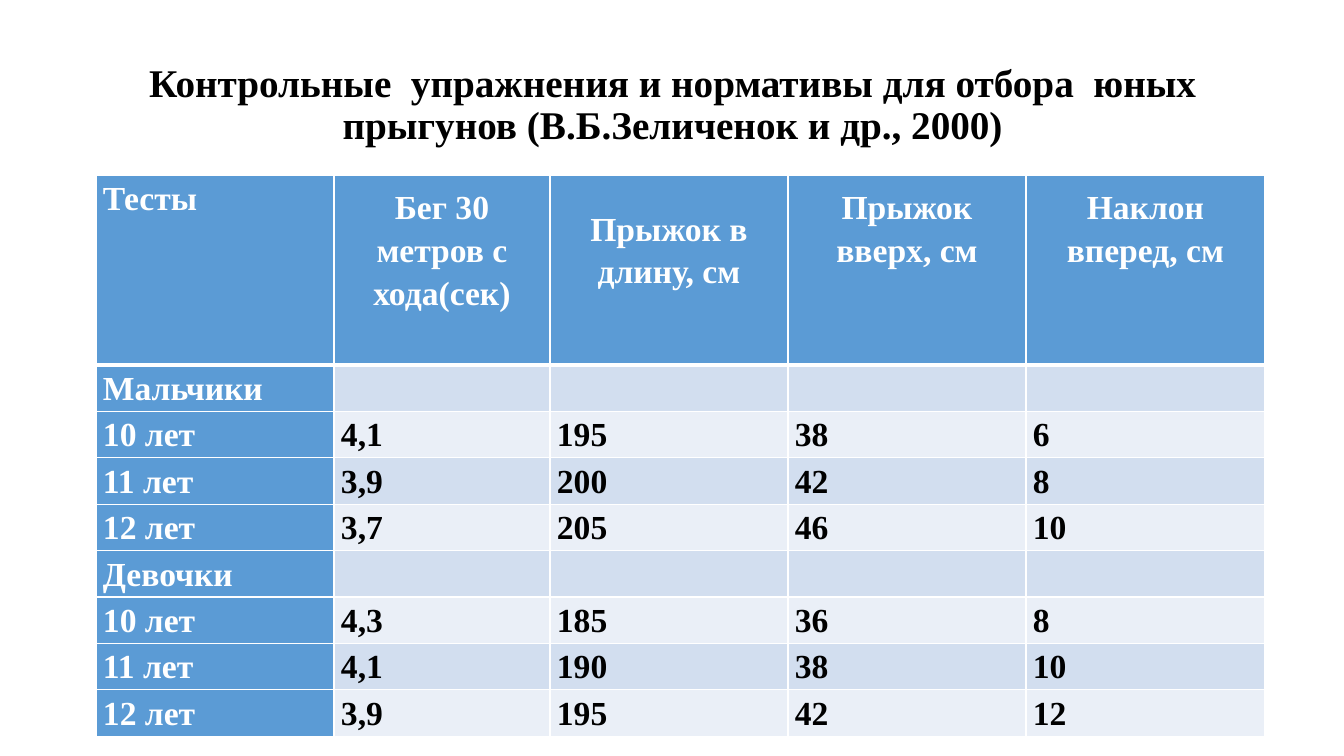
from lxml.etree import SubElement
from pptx import Presentation
from pptx.dml.color import RGBColor
from pptx.enum.text import MSO_ANCHOR, PP_ALIGN
from pptx.oxml.ns import qn
from pptx.util import Emu, Pt

FONT = "Times New Roman"
BLACK = RGBColor(0x00, 0x00, 0x00)
WHITE = RGBColor(0xFF, 0xFF, 0xFF)
BLUE = RGBColor(0x5B, 0x9B, 0xD5)
BAND_DARK = RGBColor(0xD2, 0xDE, 0xEF)
BAND_LIGHT = RGBColor(0xEA, 0xEF, 0xF7)

TITLE = "Контрольные  упражнения и нормативы для отбора  юных прыгунов (В.Б.Зеличенок и др., 2000)"
HEADERS = [
    ("Тесты", 0),
    ("Бег 30 метров с хода(сек)", 43),
    ("Прыжок в длину, см", 43),
    ("Прыжок вверх, см", 86),
    ("Наклон вперед, см", 86),
]
ROWS = [
    ["Мальчики", "", "", "", ""],
    ["10 лет", "4,1", "195", "38", "6"],
    ["11 лет", "3,9", "200", "42", "8"],
    ["12 лет", "3,7", "205", "46", "10"],
    ["Девочки", "", "", "", ""],
    ["10 лет", "4,3", "185", "36", "8"],
    ["11 лет", "4,1", "190", "38", "10"],
    ["12 лет", "3,9", "195", "42", "12"],
]
COL_WIDTHS = [238, 216, 238, 238, 239]
HEADER_HEIGHT = 190


def px(n):
    return Emu(round(n * 914400 / 100.8))


def add_text(tf, text, size, color, align, spacing):
    p = tf.paragraphs[0]
    p.alignment = align
    p.line_spacing = spacing
    r = p.add_run()
    r.text = text
    r.font.name = FONT
    r.font.size = Pt(size)
    r.font.bold = True
    r.font.color.rgb = color


def add_borders(cell, top, bottom):
    tc_pr = cell._tc.get_or_add_tcPr()
    for side, width in (("L", 1), ("R", 1), ("T", top), ("B", bottom)):
        ln = SubElement(tc_pr, qn(f"a:ln{side}"), w=str(Pt(width)))
        fill = SubElement(ln, qn("a:solidFill"))
        SubElement(fill, qn("a:srgbClr"), val=str(WHITE))


def style_cell(cell, fill, top=1, bottom=1):
    add_borders(cell, top, bottom)
    cell.fill.solid()
    cell.fill.fore_color.rgb = fill


def fill_cell(cell, text, color, align=PP_ALIGN.LEFT, margin_bottom=0):
    cell.margin_left = cell.margin_right = px(7)
    cell.margin_top = 0
    cell.margin_bottom = px(margin_bottom)
    add_text(cell.text_frame, text, 24, color, align, 1.15)


def add_title(s, x, y, w, h):
    tf = s.shapes.add_textbox(px(x), px(y), px(w), px(h)).text_frame
    tf.word_wrap = True
    tf.vertical_anchor = MSO_ANCHOR.MIDDLE
    add_text(tf, TITLE, 28, BLACK, PP_ALIGN.CENTER, 0.9)


def add_norms_table(s, x, y, w, h):
    table = s.shapes.add_table(
        len(ROWS) + 1, len(HEADERS), px(x), px(y), px(w), px(h)
    ).table
    for column, width in zip(table.columns, COL_WIDTHS):
        column.width = px(width)
    for row in table.rows:
        row.height = px((h - HEADER_HEIGHT) / len(ROWS))
    table.rows[0].height = px(HEADER_HEIGHT)

    for j, (text, margin_bottom) in enumerate(HEADERS):
        cell = table.cell(0, j)
        style_cell(cell, BLUE, bottom=3)
        cell.vertical_anchor = MSO_ANCHOR.MIDDLE if j else MSO_ANCHOR.TOP
        align = PP_ALIGN.CENTER if j else PP_ALIGN.LEFT
        fill_cell(cell, text, WHITE, align, margin_bottom)

    for i, values in enumerate(ROWS, 1):
        band = BAND_DARK if i % 2 else BAND_LIGHT
        for j, text in enumerate(values):
            cell = table.cell(i, j)
            style_cell(cell, band if j else BLUE, top=3 if i == 1 else 1)
            if text:
                fill_cell(cell, text, BLACK if j else WHITE)


def main():
    prs = Presentation()
    prs.slide_width = px(1344)
    prs.slide_height = px(756)
    s = prs.slides.add_slide(prs.slide_layouts[6])
    add_title(s, 93, 40, 1159, 132)
    add_norms_table(s, 96, 175, sum(COL_WIDTHS), 553)
    prs.save("out.pptx")


if __name__ == "__main__":
    main()
